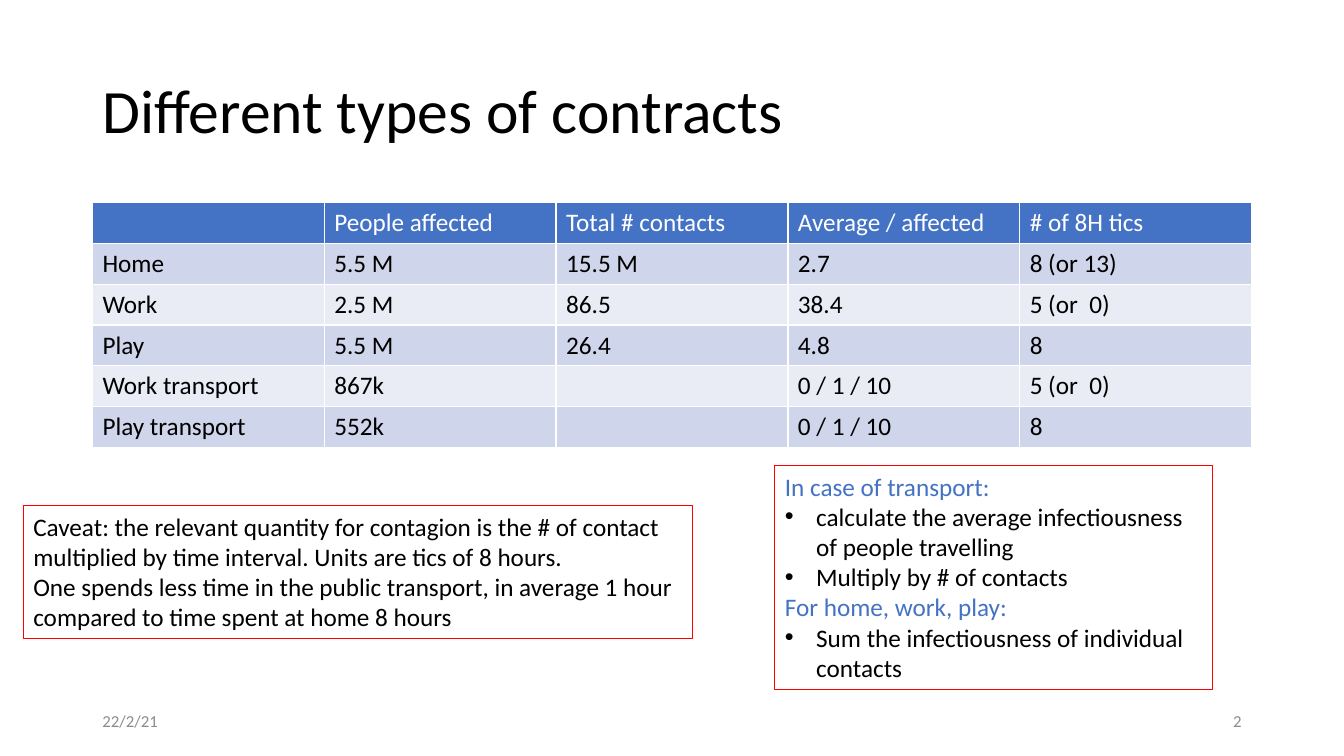
"""Build the slide on types of contracts: a table, two notes, a date and a number."""
import pptx
import pptx.util
import pptx.dml.color
import pptx.enum.text
import lxml.etree

Cm = pptx.util.Cm
Pt = pptx.util.Pt
RGB = pptx.dml.color.RGBColor
ANCHOR = pptx.enum.text.MSO_ANCHOR
ALIGN = pptx.enum.text.PP_ALIGN
FIT = pptx.enum.text.MSO_AUTO_SIZE

BLACK = RGB(0x00, 0x00, 0x00)
WHITE = RGB(0xFF, 0xFF, 0xFF)
BLUE = RGB(0x44, 0x72, 0xC4)
DARK = RGB(0xCF, 0xD5, 0xEA)
LIGHT = RGB(0xE9, 0xEB, 0xF5)
RED = RGB(0xFF, 0x00, 0x00)
GREY = RGB(0x8C, 0x8C, 0x8C)


def write(par, text, size, color):
    par.text = text
    par.font.name = "Calibri"
    par.font.size = Pt(size)
    par.font.color.rgb = color
    par.font.bold = False


def add_box(left, top, width, height, anchor=ANCHOR.TOP):
    box = slide.shapes.add_textbox(Cm(left), Cm(top), Cm(width), Cm(height))
    box.text_frame.word_wrap = True
    box.text_frame.vertical_anchor = anchor
    return box


deck = pptx.Presentation()
deck.slide_width = Cm(33.87)
deck.slide_height = Cm(19.05)
slide = deck.slides.add_slide(deck.slide_layouts[6])

title = add_box(2.33, 1.01, 29.21, 3.68, ANCHOR.MIDDLE).text_frame.paragraphs[0]
write(title, "Different types of contracts", 44, BLACK)
title.line_spacing = 0.9

rows = [
    ["", "People affected", "Total # contacts", "Average / affected", "# of 8H tics"],
    ["Home", "5.5 M", "15.5 M", "2.7", "8 (or 13)"],
    ["Work", "2.5 M", "86.5", "38.4", "5 (or  0)"],
    ["Play", "5.5 M", "26.4", "4.8", "8"],
    ["Work transport", "867k", "", "0 / 1 / 10", "5 (or  0)"],
    ["Play transport", "552k", "", "0 / 1 / 10", "8"],
]
table = slide.shapes.add_table(
    len(rows), len(rows[0]), Cm(2.33), Cm(5.1), Cm(29.21), Cm(6.18)).table
for i, row in enumerate(rows):
    fill = BLUE if i == 0 else DARK if i % 2 else LIGHT
    for j, text in enumerate(row):
        cell = table.cell(i, j)
        cell.fill.solid()
        cell.fill.fore_color.rgb = fill
        write(cell.text_frame.paragraphs[0], text, 18, BLACK if i else WHITE)

caveat = [
    ("Caveat: the relevant quantity for contagion is the # of contact "
     "multiplied by time interval. Units are tics of 8 hours.", BLACK, False),
    ("One spends less time in the public transport, in average 1 hour "
     "compared to time spent at home 8 hours", BLACK, False),
]
method = [
    ("In case of transport:", BLUE, False),
    ("calculate the average infectiousness of people travelling", BLACK, True),
    ("Multiply by # of contacts", BLACK, True),
    ("For home, work, play:", BLUE, False),
    ("Sum the infectiousness of individual contacts", BLACK, True),
]
notes = [((0.59, 12.75, 16.87, 3.33), caveat), ((19.53, 11.74, 11.02, 5.64), method)]
for place, lines in notes:
    box = add_box(*place)
    box.line.color.rgb = RED
    box.line.width = Pt(0.75)
    frame = box.text_frame
    frame.auto_size = FIT.SHAPE_TO_FIT_TEXT
    for i, (text, color, listed) in enumerate(lines):
        par = frame.add_paragraph() if i else frame.paragraphs[0]
        write(par, text, 18, color)
        if listed:
            props = par._p.get_or_add_pPr()
            props.set("marL", str(Cm(0.79)))
            props.set("indent", str(-Cm(0.79)))
            tag = "{http://schemas.openxmlformats.org/drawingml/2006/main}"
            font = lxml.etree.Element(tag + "buFont", typeface="Arial")
            mark = lxml.etree.Element(tag + "buChar", char="•")
            props.insert(0, font)
            props.insert(1, mark)

for left, text, align in [(2.33, "22/2/21", ALIGN.LEFT), (23.92, "2", ALIGN.RIGHT)]:
    par = add_box(left, 17.66, 7.62, 1.01, ANCHOR.MIDDLE).text_frame.paragraphs[0]
    write(par, text, 12, GREY)
    par.alignment = align

deck.save("out.pptx")
